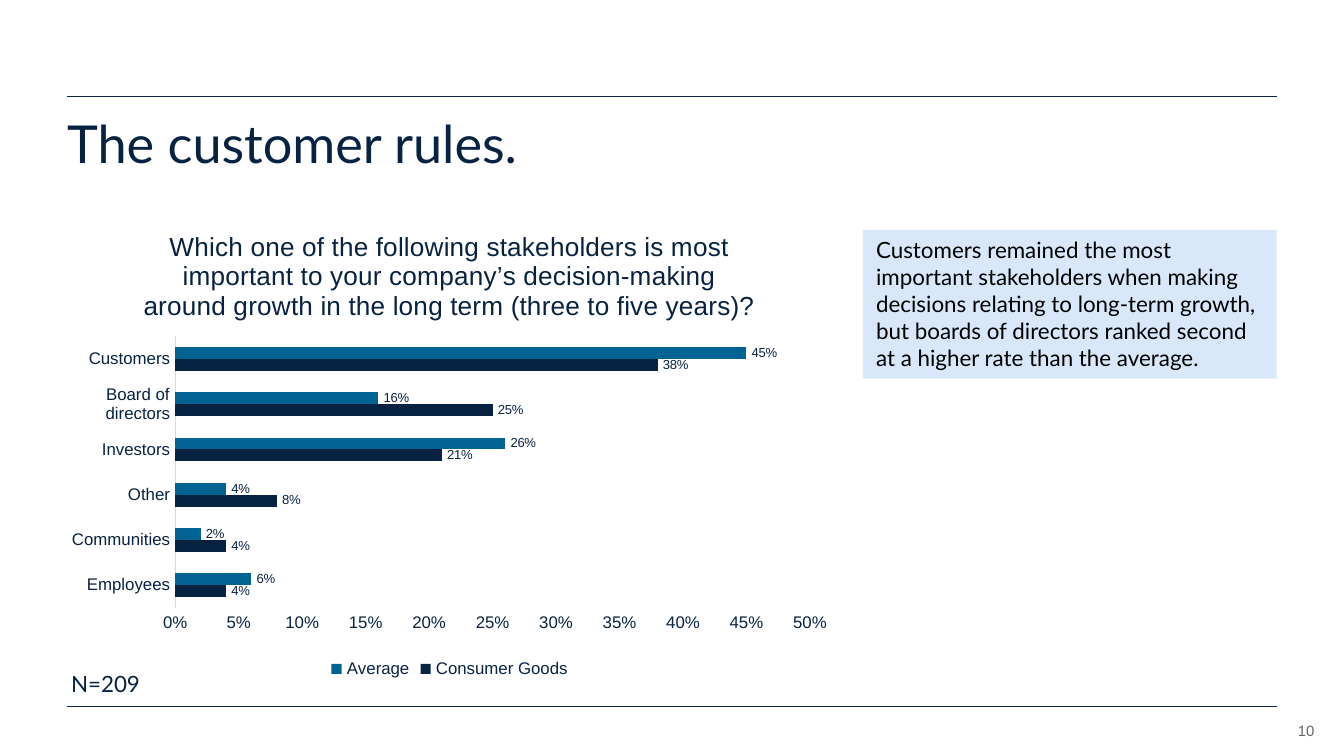
"""Build the slide on which stakeholders matter most for long-term growth."""
from lxml.etree import SubElement as Sub
from pptx import Presentation
from pptx.chart.data import CategoryChartData as Data
from pptx.dml.color import RGBColor
from pptx.enum.chart import XL_CHART_TYPE as Kind, XL_LABEL_POSITION as Spot
from pptx.enum.chart import XL_LEGEND_POSITION as Side, XL_TICK_MARK as Tick
from pptx.enum.shapes import MSO_CONNECTOR as Link, MSO_SHAPE as Form
from pptx.enum.text import MSO_ANCHOR as Anchor, PP_ALIGN as Align
from pptx.oxml.ns import qn
from pptx.util import Inches, Pt

NAVY = RGBColor(0x08, 0x22, 0x41)
BLUE = RGBColor(0x00, 0x63, 0x93)
PALE = RGBColor(0xD8, 0xE8, 0xFA)
RULE = RGBColor(0xC5, 0xDC, 0xF8)
GREY = RGBColor(0x66, 0x66, 0x66)
BLACK = RGBColor(0x00, 0x00, 0x00)

deck = Presentation()
deck.slide_width, deck.slide_height = Inches(10), Inches(10) * 9 // 16
slide = deck.slides.add_slide(deck.slide_layouts[5])
shapes = slide.shapes
col, row = deck.slide_width / 100, deck.slide_height / 100


def place(x, y, w, h):
    return int(x * col), int(y * row), int(w * col), int(h * row)


def write(frame, text, size=12, font="Lato", color=NAVY, align=Align.LEFT,
          anchor=Anchor.TOP, inset=None, leading=None):
    frame.word_wrap = True
    frame.vertical_anchor = anchor
    if inset is not None:
        frame.margin_left = frame.margin_right = inset
        frame.margin_top = frame.margin_bottom = inset
    par = frame.paragraphs[0]
    par.alignment, par.line_spacing = align, leading
    run = par.add_run()
    run.text = text
    run.font.size, run.font.name, run.font.bold = Pt(size), font, False
    run.font.color.rgb = color


for y in (12.8, 93.5):
    left, top, wide, _ = place(5, y, 90, 0)
    line = shapes.add_connector(Link.STRAIGHT, left, top, left + wide, top)
    line.line.color.rgb, line.line.width = NAVY, Pt(0.5)
    Sub(line._element.spPr, qn("a:effectLst"))

title = shapes.title
title.left, title.top, title.width, title.height = place(5, 15.6, 90, 9.8)
write(title.text_frame, "The customer rules.", size=28, inset=0, leading=0.9)

note = shapes.add_shape(Form.RECTANGLE, *place(64.2, 30.4, 30.8, 19.7))
note.shadow.inherit = False
note.fill.solid()
note.fill.fore_color.rgb = PALE
note.line.fill.background()
write(note.text_frame, "Customers remained the most important stakeholders when "
      "making decisions relating to long-term growth, but boards of directors "
      "ranked second at a higher rate than the average.", color=BLACK)

data = Data(number_format="0%")
data.categories = ["Employees", "Communities", "Other", "Investors",
                   "Board of directors", "Customers"]
data.add_series("Consumer Goods", (0.04, 0.04, 0.08, 0.21, 0.25, 0.38))
data.add_series("Average", (0.06, 0.02, 0.04, 0.26, 0.16, 0.45))
chart = shapes.add_chart(Kind.BAR_CLUSTERED, *place(4.3, 27.5, 58.3, 63), data).chart
chart.font.size, chart.font.name, chart.font.color.rgb = Pt(10), "Arial", NAVY
write(chart.chart_title.text_frame, "Which one of the following stakeholders is most "
      "important to your company’s decision-making around growth in the long term "
      "(three to five years)?", size=14, font="Arial", align=Align.CENTER)
chart.chart_title.include_in_layout = False
chart.has_legend = True
chart.legend.position, chart.legend.include_in_layout = Side.BOTTOM, False

plot = chart.plots[0]
plot.gap_width, plot.overlap, plot.vary_by_categories = 182, 0, False
for bars, color in zip(plot.series, (NAVY, BLUE)):
    bars.format.fill.solid()
    bars.format.fill.fore_color.rgb = color
    tags = bars.data_labels
    tags.show_value, tags.position = True, Spot.OUTSIDE_END
    tags.number_format, tags.number_format_is_linked = "0%", False
    tags.font.size, tags.font.name, tags.font.color.rgb = Pt(7), "Arial", NAVY

cats, vals = chart.category_axis, chart.value_axis
for axis in (cats, vals):
    axis.has_major_gridlines = False
    axis.major_tick_mark = axis.minor_tick_mark = Tick.NONE
for part in (cats.tick_labels, vals.tick_labels, chart.legend):
    part.font.size, part.font.name, part.font.color.rgb = Pt(9), "Arial", NAVY
cats.format.line.color.rgb, cats.format.line.width = RULE, Pt(0.75)
vals.format.line.fill.background()
vals.minimum_scale, vals.maximum_scale, vals.major_unit = 0, 0.5, 0.05
vals.tick_labels.number_format = "0%"
vals.tick_labels.number_format_is_linked = False

area = chart._chartSpace.chart.plotArea
for old in area.findall(qn("c:layout")):
    area.remove(old)
frame = area.makeelement(qn("c:layout"))
area.insert(0, frame)
spot = Sub(frame, qn("c:manualLayout"))
for tag, val in (("layoutTarget", "inner"), ("xMode", "edge"), ("yMode", "edge"),
                 ("x", "0.15"), ("y", "0.27"), ("w", "0.81"), ("h", "0.57")):
    Sub(spot, qn("c:" + tag), val=val)

base = shapes.add_textbox(*place(4.3, 87.8, 12.8, 5.3))
write(base.text_frame, "N=209")
page = shapes.add_textbox(*place(93.1, 94.6, 4.7, 3.2))
write(page.text_frame, "10", size=8, font="Arial", color=GREY, align=Align.RIGHT,
      anchor=Anchor.BOTTOM, inset=0)

deck.save("out.pptx")
